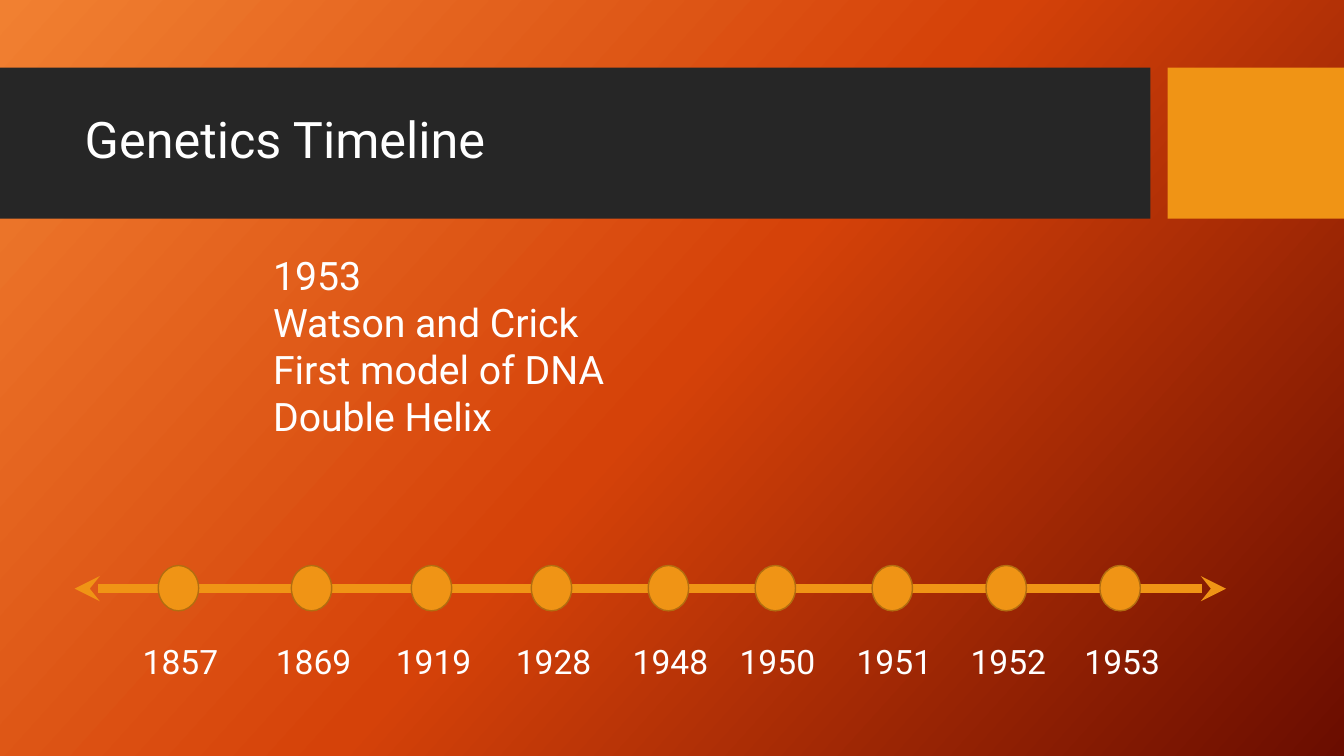
from copy import deepcopy
from pptx import Presentation
from pptx.dml.color import RGBColor
from pptx.enum.shapes import MSO_CONNECTOR, MSO_SHAPE
from pptx.enum.text import MSO_ANCHOR, MSO_AUTO_SIZE, PP_ALIGN
from pptx.oxml.ns import qn
from pptx.oxml.xmlchemy import OxmlElement
from pptx.util import Inches, Pt

WIDE, HIGH = 13.33, 7.5
DARK, GOLD, RIM, WHITE = "262626", "F09415", "B26D10", "FFFFFF"
GLOW = [(0, "F18031"), (0.5, "D54209"), (1, "6A0D00")]
DATES = {"1857": 1.77, "1869": 3.09, "1919": 4.28, "1928": 5.47, "1948": 6.63,
         "1950": 7.69, "1951": 8.85, "1952": 9.98, "1953": 11.11}
STORY = ["1953", "Watson and Crick", "First model of DNA", "Double Helix"]


def tint(code):
    """Turn a hex string into a colour."""
    return RGBColor.from_string(code)


def paint(slide):
    """Fill the background with the slanted gradient."""
    fill = slide.background.fill
    fill.gradient()
    fill.gradient_angle = 318
    stops = slide._element.find(".//" + qn("a:gsLst"))
    stops.insert(1, deepcopy(stops[0]))
    for stop, (place, code) in zip(fill.gradient_stops, GLOW):
        stop.position = place
        stop.color.rgb = tint(code)


def shape(slide, kind, box, code, rim=None):
    """Add a flat shape, with a thin rim if one is given."""
    item = slide.shapes.add_shape(kind, *map(Inches, box))
    item.shadow.inherit = False
    item.fill.solid()
    item.fill.fore_color.rgb = tint(code)
    if rim:
        item.line.color.rgb = tint(rim)
        item.line.width = Pt(1)
    else:
        item.line.fill.background()
    return item


def style(frame, size, align):
    """Format every paragraph of a text frame."""
    frame.word_wrap = True
    for para in frame.paragraphs:
        para.alignment = align
        para.font.size = Pt(size)
        para.font.name = "Roboto"
        para.font.color.rgb = tint(WHITE)


def label(slide, box, text, size, align=PP_ALIGN.LEFT):
    """Add a text box that grows with its text."""
    frame = slide.shapes.add_textbox(*map(Inches, box)).text_frame
    frame.text = text
    frame.auto_size = MSO_AUTO_SIZE.SHAPE_TO_FIT_TEXT
    style(frame, size, align)


def header(slide, top, high, text):
    """Place the dark band, the gold block and the title."""
    shape(slide, MSO_SHAPE.RECTANGLE, (0, top, 11.41, high), DARK)
    shape(slide, MSO_SHAPE.RECTANGLE, (11.58, top, WIDE - 11.58, high), GOLD)
    title = slide.shapes.title
    slide.shapes._spTree.append(title._element)
    title.left, title.top = Inches(0.74), Inches(top + 0.15)
    title.width, title.height = Inches(10.51), Inches(high - 0.32)
    frame = title.text_frame
    frame.text = text
    frame.vertical_anchor = MSO_ANCHOR.MIDDLE
    frame.paragraphs[0].line_spacing = 0.9
    style(frame, 36, PP_ALIGN.LEFT)


def axis(slide, left, right, mid):
    """Draw the line with an arrowhead at each end."""
    rod = slide.shapes.add_connector(
        MSO_CONNECTOR.STRAIGHT, *map(Inches, (left, mid, right, mid)))
    rod.line.color.rgb = tint(GOLD)
    rod.line.width = Pt(6)
    for end in ("a:headEnd", "a:tailEnd"):
        mark = OxmlElement(end)
        mark.set("type", "stealth")
        rod.line._get_or_add_ln().append(mark)
    rod._element.spPr.append(OxmlElement("a:effectLst"))


def timeline(slide, left, right, mid):
    """Set a dot and a year at each date along the axis."""
    axis(slide, left, right, mid)
    for spot in DATES.values():
        shape(slide, MSO_SHAPE.OVAL, (spot - 0.2, mid - 0.23, 0.4, 0.45), GOLD, RIM)
    for year, spot in DATES.items():
        label(slide, (spot - 0.49, mid + 0.47, 1.02, 0.5), year, 24, PP_ALIGN.CENTER)


def main():
    """Build and save the slide."""
    deck = Presentation()
    deck.slide_width, deck.slide_height = Inches(WIDE), Inches(HIGH)
    slide = deck.slides.add_slide(deck.slide_layouts[5])
    paint(slide)
    header(slide, 0.67, 1.5, "Genetics Timeline")
    timeline(slide, 0.74, 12.16, 5.84)
    label(slide, (2.61, 2.44, 8.71, 1.99), "\n".join(STORY), 28)
    deck.save("out.pptx")


if __name__ == "__main__":
    main()
